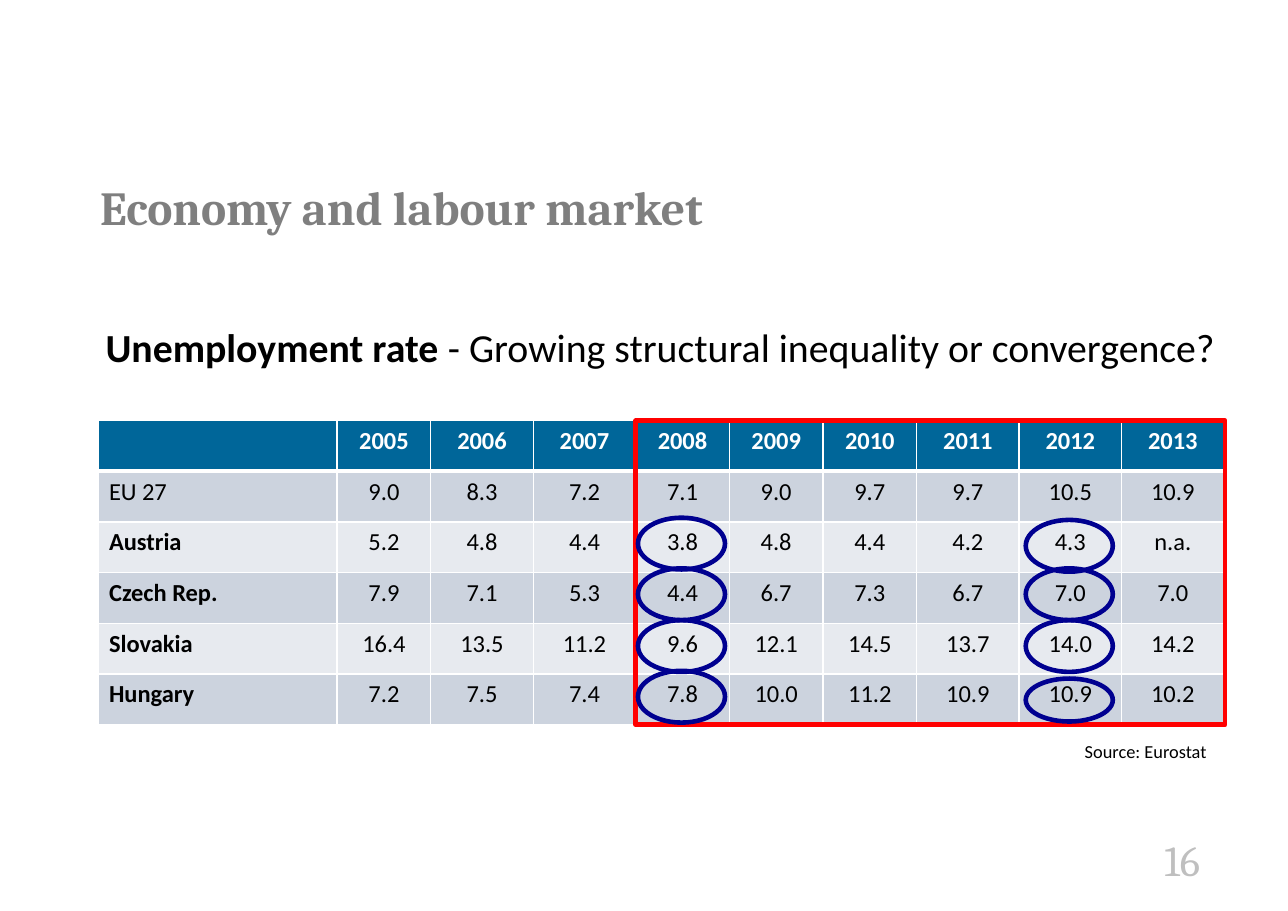
from lxml.etree import SubElement
from pptx import Presentation
from pptx.dml.color import RGBColor
from pptx.enum.shapes import MSO_SHAPE
from pptx.enum.text import PP_ALIGN
from pptx.oxml.ns import qn
from pptx.util import Pt

BLACK, WHITE, RED, NAVY = "000000", "FFFFFF", "FF0000", "000090"
HEADER_FILL = "006699"
BAND_FILLS = ("CCD3DE", "E7EAEF")

TABLE_LEFT, TABLE_TOP = 64.08, 275.04
ROW_HEIGHT = 33.12
NARROW, WIDE = 61.2, 66.96
COLUMN_WIDTHS = [156.24, NARROW, WIDE, WIDE, NARROW, NARROW, NARROW, WIDE, WIDE, WIDE]
ROWS = [
    ["", "2005", "2006", "2007", "2008", "2009", "2010", "2011", "2012", "2013"],
    ["EU 27", "9.0", "8.3", "7.2", "7.1", "9.0", "9.7", "9.7", "10.5", "10.9"],
    ["Austria", "5.2", "4.8", "4.4", "3.8", "4.8", "4.4", "4.2", "4.3", "n.a."],
    ["Czech Rep.", "7.9", "7.1", "5.3", "4.4", "6.7", "7.3", "6.7", "7.0", "7.0"],
    ["Slovakia", "16.4", "13.5", "11.2", "9.6", "12.1", "14.5", "13.7", "14.0", "14.2"],
    ["Hungary", "7.2", "7.5", "7.4", "7.8", "10.0", "11.2", "10.9", "10.9", "10.2"],
]

RING_WIDTH, RING_HEIGHT = 56.88, 33.84
# Left edge of each ringed year, then top and height of its rings
RINGS = {
    416.88: [(338.4, RING_HEIGHT), (371.52, RING_HEIGHT),
             (405.36, RING_HEIGHT), (438.48, RING_HEIGHT)],
    670.32: [(339.84, RING_HEIGHT), (371.52, RING_HEIGHT),
             (405.36, RING_HEIGHT), (443.52, 28.08)],
}


def color(value):
    return RGBColor.from_string(value)


def add_span(para, text, size, fill=BLACK, bold=False, font="Calibri"):
    span = para.add_run()
    span.text = text
    span.font.name = font
    span.font.size = Pt(size)
    span.font.bold = bold
    span.font.color.rgb = color(fill)


def add_text_line(page, left, top, width, height, align=PP_ALIGN.LEFT):
    """Add a wrapping text box and return its first paragraph."""
    box = page.shapes.add_textbox(Pt(left), Pt(top), Pt(width), Pt(height))
    box.text_frame.word_wrap = True
    para = box.text_frame.paragraphs[0]
    para.alignment = align
    return para


def add_outline(page, kind, left, top, width, height, line):
    """Add an unfilled shape with a 3 pt line."""
    shape = page.shapes.add_shape(kind, Pt(left), Pt(top), Pt(width), Pt(height))
    shape.shadow.inherit = False
    shape.fill.background()
    shape.line.color.rgb = color(line)
    shape.line.width = Pt(3)


def set_borders(cell, top, bottom):
    """Draw white cell borders; top and bottom are widths in points."""
    properties = cell._tc.get_or_add_tcPr()
    for side, width in (("L", 1), ("R", 1), ("T", top), ("B", bottom)):
        line = SubElement(properties, qn(f"a:ln{side}"), w=str(Pt(width)))
        fill = SubElement(line, qn("a:solidFill"))
        SubElement(fill, qn("a:srgbClr"), val=WHITE)


def fill_cell(cell, text, row, column):
    header = row == 0
    set_borders(cell, top=3 if row == 1 else 1, bottom=3 if header else 1)
    cell.fill.solid()
    cell.fill.fore_color.rgb = color(HEADER_FILL if header else BAND_FILLS[(row - 1) % 2])
    if text:
        para = cell.text_frame.paragraphs[0]
        para.alignment = PP_ALIGN.CENTER if column else PP_ALIGN.LEFT
        bold = header or (column == 0 and row > 1)
        add_span(para, text, 16, WHITE if header else BLACK, bold)


def add_rate_table(page):
    table = page.shapes.add_table(
        len(ROWS), len(COLUMN_WIDTHS), Pt(TABLE_LEFT), Pt(TABLE_TOP),
        Pt(sum(COLUMN_WIDTHS)), Pt(ROW_HEIGHT * len(ROWS))).table
    for column, width in zip(table.columns, COLUMN_WIDTHS):
        column.width = Pt(width)
    for row, texts in enumerate(ROWS):
        table.rows[row].height = Pt(ROW_HEIGHT)
        for column, text in enumerate(texts):
            fill_cell(table.cell(row, column), text, row, column)


def main():
    deck = Presentation()
    deck.slide_width, deck.slide_height = Pt(841.68), Pt(595.44)
    page = deck.slides.add_slide(deck.slide_layouts[6])

    number = add_text_line(page, 621.36, 541.44, 169.92, 41.04, PP_ALIGN.RIGHT)
    add_span(number, "16", 28, "BFBFBF", font="Cambria")

    title = add_text_line(page, 58.32, 115.92, 725.76, 76.32)
    title.line_spacing = Pt(34)
    add_span(title, "Economy and labour market", 31, "7F7F7F", True, "Cambria")

    add_rate_table(page)

    heading = add_text_line(page, 61.92, 207.36, 772.56, 38.16)
    add_span(heading, "Unemployment rate", 26, bold=True)
    add_span(heading, " - Growing structural inequality or convergence?", 26)

    source = add_text_line(page, 58.32, 480.24, 737.28, 21.6, PP_ALIGN.RIGHT)
    add_span(source, "Source: Eurostat", 12)

    add_outline(page, MSO_SHAPE.RECTANGLE, 415.44, TABLE_TOP, 385.2,
                ROW_HEIGHT * len(ROWS), RED)
    for left, rings in RINGS.items():
        for top, height in rings:
            add_outline(page, MSO_SHAPE.OVAL, left, top, RING_WIDTH, height, NAVY)

    deck.save("out.pptx")


if __name__ == "__main__":
    main()
